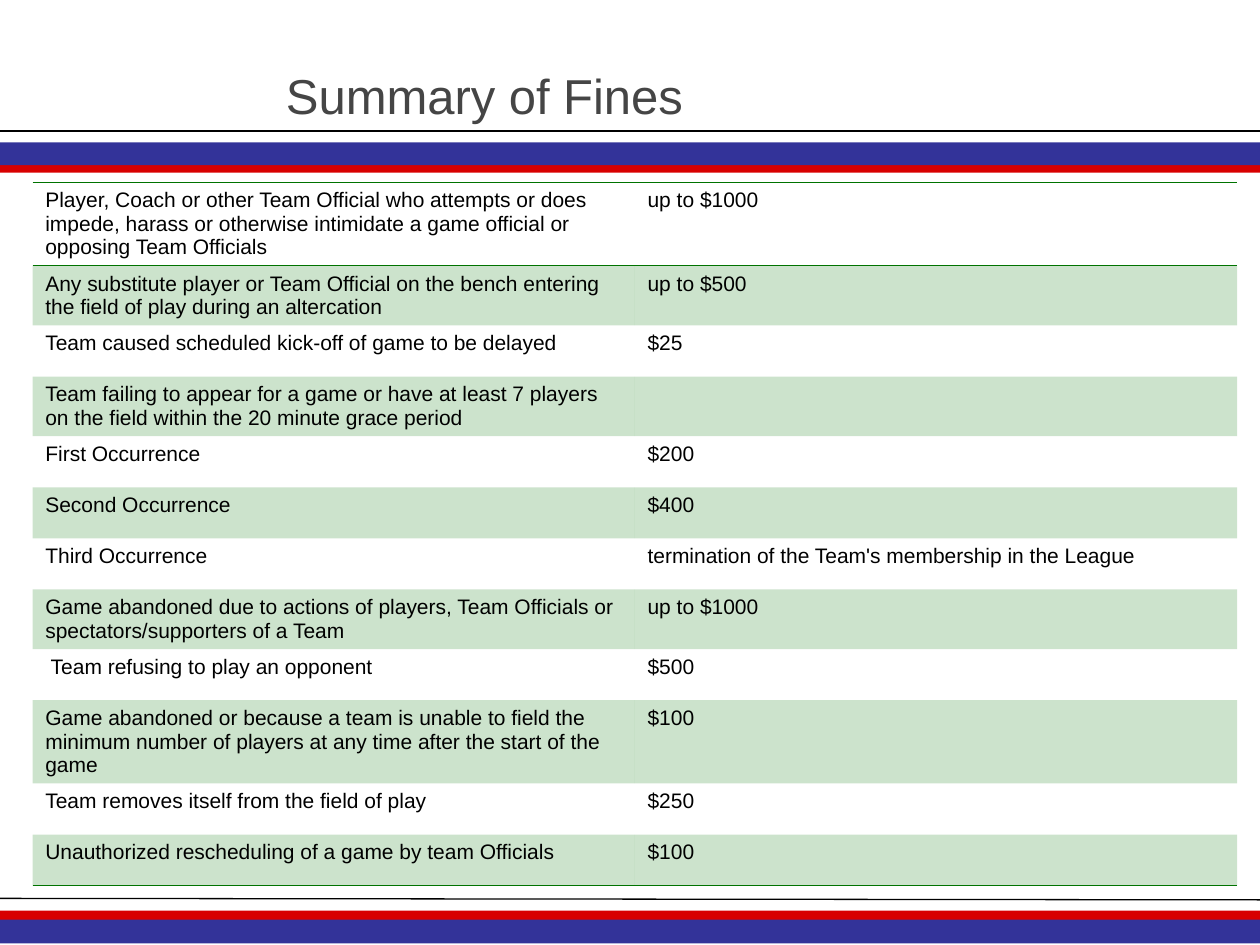
from lxml.etree import SubElement
from pptx import Presentation
from pptx.dml.color import RGBColor
from pptx.enum.shapes import MSO_CONNECTOR, MSO_SHAPE
from pptx.enum.text import MSO_ANCHOR, MSO_AUTO_SIZE, PP_ALIGN
from pptx.oxml import parse_xml
from pptx.oxml.ns import nsdecls, qn
from pptx.util import Cm, Pt

RED = RGBColor(0xD8, 0x00, 0x00)
BLUE = RGBColor(0x33, 0x33, 0x99)
GREEN = RGBColor(0x00, 0x73, 0x00)
GREY = RGBColor(0x45, 0x45, 0x45)
BLACK = RGBColor(0x00, 0x00, 0x00)
FONT = "Arial"
NO_GRID_STYLE = "{2D5ABB26-0587-4C30-8999-92F81FD0307C}"

FINES = [
    ("Player, Coach or other Team Official who attempts or does impede, harass or "
     "otherwise intimidate a game official or opposing Team Officials", "up to $1000"),
    ("Any substitute player or Team Official on the bench entering the field of play "
     "during an altercation", "up to $500"),
    ("Team caused scheduled kick-off of game to be delayed", "$25"),
    ("Team failing to appear for a game or have at least 7 players on the field within "
     "the 20 minute grace period", ""),
    ("First Occurrence", "$200"),
    ("Second Occurrence", "$400"),
    ("Third Occurrence", "termination of the Team's membership in the League"),
    ("Game abandoned due to actions of players, Team Officials or spectators/supporters "
     "of a Team", "up to $1000"),
    (" Team refusing to play an opponent", "$500"),
    ("Game abandoned or because a team is unable to field the minimum number of players "
     "at any time after the start of the game", "$100"),
    ("Team removes itself from the field of play", "$250"),
    ("Unauthorized rescheduling of a game by team Officials", "$100"),
]


def add_stripes(page, top, width, bands, drop=0):
    """Thin black rule at top, with coloured bands (offset, height, colour) below it."""
    for offset, height, color in bands:
        band = page.shapes.add_shape(
            MSO_SHAPE.RECTANGLE, 0, top + Cm(offset), width, Cm(height))
        band.shadow.inherit = False
        band.fill.solid()
        band.fill.fore_color.rgb = color
        band.line.fill.background()
    rule = page.shapes.add_connector(
        MSO_CONNECTOR.STRAIGHT, 0, top, Cm(25.4), top + Cm(drop))
    rule.line.color.rgb = BLACK
    rule.line.width = Pt(0.75)
    SubElement(rule.element.spPr, qn("a:effectLst"))


def add_title(page, left, top, width, height):
    title = page.shapes.title
    title.left, title.top, title.width, title.height = left, top, width, height
    frame = title.text_frame
    frame.text = "Summary of Fines"
    frame.word_wrap = True
    frame.auto_size = MSO_AUTO_SIZE.NONE
    frame.vertical_anchor = MSO_ANCHOR.BOTTOM
    para = frame.paragraphs[0]
    para.alignment = PP_ALIGN.LEFT
    para.line_spacing = 0.8
    para.font.name = FONT
    para.font.size = Pt(28)
    para.font.color.rgb = GREY


def add_border(cell, side):
    """Green line on one side of a cell: lnT or lnB."""
    properties = cell._tc.get_or_add_tcPr()
    line = parse_xml(
        f'<a:{side} {nsdecls("a")} w="{Pt(1)}"><a:solidFill>'
        f'<a:srgbClr val="{GREEN}"/></a:solidFill></a:{side}>')
    properties.insert(len(properties.findall(qn("a:lnT"))), line)


def fill_cell(cell, shaded):
    if not shaded:
        cell.fill.background()
        return
    cell.fill.solid()
    cell.fill.fore_color.rgb = GREEN
    color = cell._tc.tcPr.find(".//" + qn("a:srgbClr"))
    SubElement(color, qn("a:alpha"), val="20000")


def add_fines_table(page, left, top, width, row_height):
    frame = page.shapes.add_table(
        len(FINES), 2, left, top, width, row_height * len(FINES))
    table = frame.table
    table.first_row = table.horz_banding = False
    table._tbl.tblPr.find(qn("a:tableStyleId")).text = NO_GRID_STYLE
    for row, texts in enumerate(FINES):
        for column, text in enumerate(texts):
            cell = table.cell(row, column)
            cell.text = text
            para = cell.text_frame.paragraphs[0]
            para.font.name = FONT
            para.font.size = Pt(12)
            para.font.color.rgb = BLACK
            fill_cell(cell, shaded=row % 2 == 1)
            if row == 0:
                add_border(cell, "lnT")
            if row in (0, len(FINES) - 1):
                add_border(cell, "lnB")


def main():
    deck = Presentation()
    deck.slide_width, deck.slide_height = Cm(25.4), Cm(19.05)
    page = deck.slides.add_slide(deck.slide_layouts[5])

    # Header and footer stripes
    add_stripes(page, Cm(2.64), Cm(25.4), [(0.61, 0.23, RED), (0.23, 0.46, BLUE)])
    add_stripes(page, Cm(18.11), Cm(25.43),
                [(0.25, 0.23, RED), (0.43, 0.48, BLUE)], drop=0.03)

    # Title and table of fines
    add_title(page, Cm(5.51), Cm(0.61), Cm(16.28), Cm(2.01))
    add_fines_table(page, Cm(0.66), Cm(3.68), Cm(24.28), Cm(1.03))

    deck.save("out.pptx")


if __name__ == "__main__":
    main()
